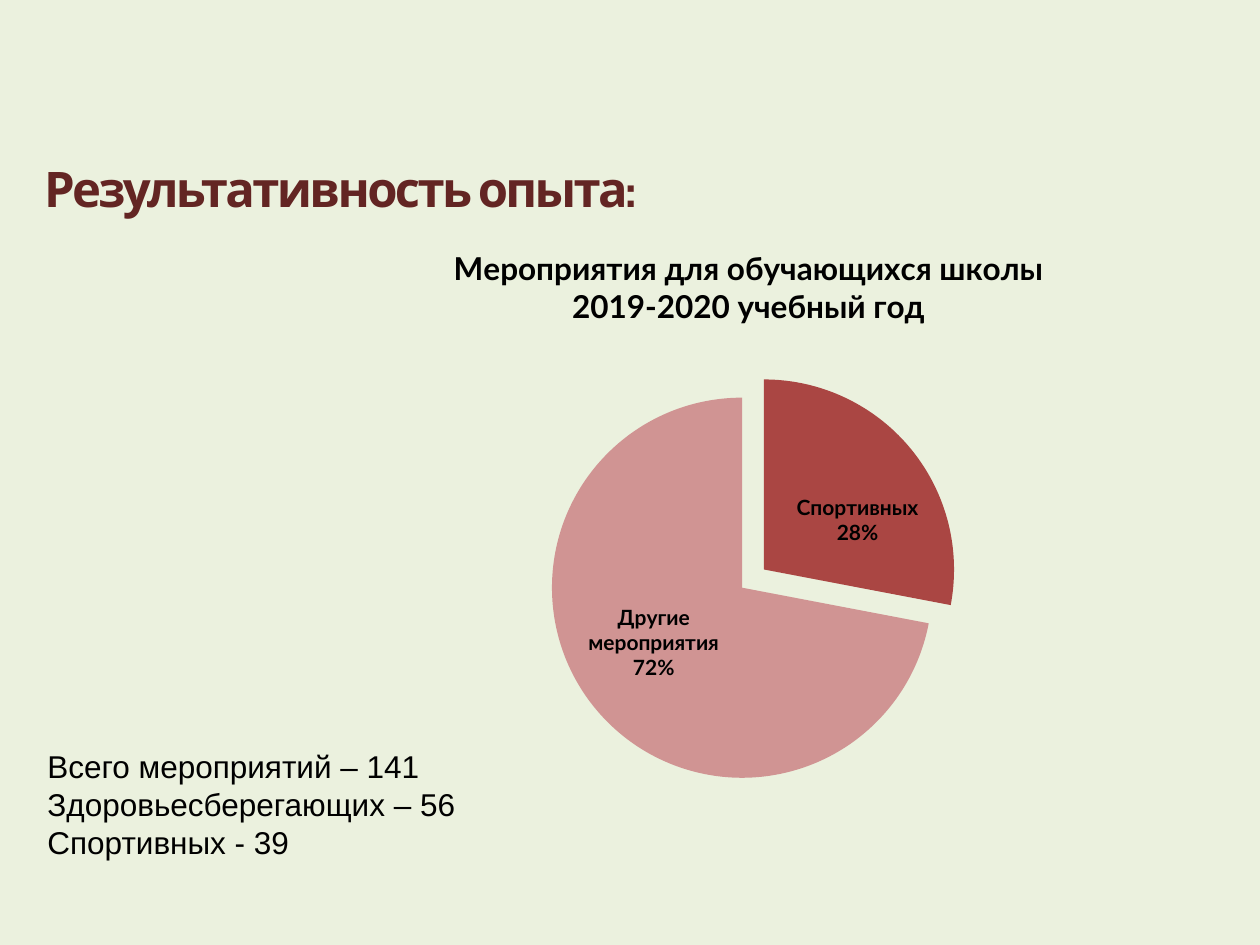
from lxml import etree
from pptx import Presentation
from pptx.chart.data import CategoryChartData
from pptx.dml.color import RGBColor
from pptx.enum.chart import XL_CHART_TYPE, XL_LABEL_POSITION
from pptx.enum.text import MSO_ANCHOR
from pptx.oxml.ns import qn
from pptx.util import Pt

PIE = XL_CHART_TYPE.PIE
CENTER = XL_LABEL_POSITION.CENTER
TOP = MSO_ANCHOR.TOP

# Content
HEADING = "Результативность опыта:"
CHART_TITLE = ["Мероприятия для обучающихся школы", "2019-2020 учебный год"]
# category, value, colour, explosion in %, label offset in px
SLICES = [
    ("Спортивных", 28, "AA4643", 15, (20, 11)),
    ("Другие мероприятия", 72, "D09493", 0, (-15, -6)),
]
TOTALS = ["Всего мероприятий – 141", "Здоровьесберегающих – 56", "Спортивных - 39"]

# Positions in px: left, top, width, height
SCALE = 914400 // 126
SLIDE_SIZE = (1260, 945)
HEADING_BOX = (44, 165, 1155, 107)
CHART_BOX = (372, 224, 753, 595)
PLOT_BOX = (180, 174, 380, 380)  # within the chart
TOTALS_BOX = (35, 741, 437, 127)


class Theme:
    background = RGBColor.from_string("EBF1DE")
    heading = RGBColor.from_string("632523")
    text = RGBColor.from_string("000000")
    heading_font, chart_font, body_font = "Cabin", "Lato", "Arial"
    heading_size, chart_title_size, body_size, label_size = 28, 18, 18, 12


def emu(lengths):
    return [length * SCALE for length in lengths]


def style(font, name, size, color, bold=False):
    font.name, font.size, font.bold = name, Pt(size), bold
    font.color.rgb = color


def write_lines(frame, lines, *font_style):
    for index, line in enumerate(lines):
        paragraph = frame.add_paragraph() if index else frame.paragraphs[0]
        paragraph.text = line
        style(paragraph.font, *font_style)


def add_text(slide, box, lines, *font_style):
    frame = slide.shapes.add_textbox(*emu(box)).text_frame
    frame.vertical_anchor = TOP
    write_lines(frame, lines, *font_style)
    return frame


def manual_layout(**values):
    """Build a chart layout element from its named parts."""
    layout = etree.Element(qn("c:layout"))
    manual = etree.SubElement(layout, qn("c:manualLayout"))
    for name, value in values.items():
        text = value if isinstance(value, str) else f"{value:.3f}"
        etree.SubElement(manual, qn(f"c:{name}")).set("val", text)
    return layout


def add_pie(slide):
    data = CategoryChartData()
    data.categories = [item[0] for item in SLICES]
    data.add_series("Мероприятия", [item[1] for item in SLICES])
    chart = slide.shapes.add_chart(PIE, *emu(CHART_BOX), data).chart
    chart.has_legend = False
    style(chart.font, Theme.chart_font, Theme.label_size, Theme.text)
    chart.has_title = True
    write_lines(chart.chart_title.text_frame, CHART_TITLE, Theme.chart_font,
                Theme.chart_title_size, Theme.text, True)

    plot = chart.plots[0]
    plot.vary_by_categories = True
    series = plot.series[0]
    width, height = CHART_BOX[2:]
    for index, (_, _, color, explosion, _) in enumerate(SLICES):
        point = series.points[index]
        point.format.fill.solid()
        point.format.fill.fore_color.rgb = RGBColor.from_string(color)
        point.format.line.fill.background()
        style(point.data_label.font, Theme.chart_font, Theme.label_size, Theme.text, True)
        point.data_label.position = CENTER
        if explosion:
            slice_xml = series._element.findall(qn("c:dPt"))[index]
            exploded = etree.Element(qn("c:explosion"))
            exploded.set("val", str(explosion))
            slice_xml.find(qn("c:spPr")).addprevious(exploded)

    # Labels: category and percentage on separate lines, nudged off centre
    labels = series._element.iter(qn("c:dLbl"))
    for label, (*_, (shift_x, shift_y)) in zip(labels, SLICES):
        layout = manual_layout(x=shift_x / width, y=shift_y / height)
        label.find(qn("c:idx")).addnext(layout)
        for name, shown in (("showVal", "0"), ("showCatName", "1"), ("showPercent", "1")):
            label.find(qn(f"c:{name}")).set("val", shown)
        etree.SubElement(label, qn("c:separator")).text = "\n"

    # Plot area
    area = chart._chartSpace.find(f".//{qn('c:plotArea')}")
    for old_layout in area.findall(qn("c:layout")):
        area.remove(old_layout)
    left, top, plot_width, plot_height = PLOT_BOX
    area.insert(0, manual_layout(
        layoutTarget="inner", xMode="edge", yMode="edge", x=left / width,
        y=top / height, w=plot_width / width, h=plot_height / height))


def main():
    presentation = Presentation()
    presentation.slide_width, presentation.slide_height = emu(SLIDE_SIZE)
    slide = presentation.slides.add_slide(presentation.slide_layouts[6])
    slide.background.fill.solid()
    slide.background.fill.fore_color.rgb = Theme.background

    # Heading with tight letter spacing
    frame = add_text(slide, HEADING_BOX, [HEADING], Theme.heading_font,
                     Theme.heading_size, Theme.heading, True)
    frame.word_wrap = True
    frame.margin_left = frame.margin_top = frame.margin_right = frame.margin_bottom = 0
    paragraph = frame.paragraphs[0]
    paragraph.line_spacing = 0.9
    paragraph.runs[0].font._element.set("spc", "-150")

    add_pie(slide)
    totals = add_text(slide, TOTALS_BOX, TOTALS, Theme.body_font, Theme.body_size, Theme.text)
    totals.word_wrap = False
    presentation.save("out.pptx")


if __name__ == "__main__":
    main()
